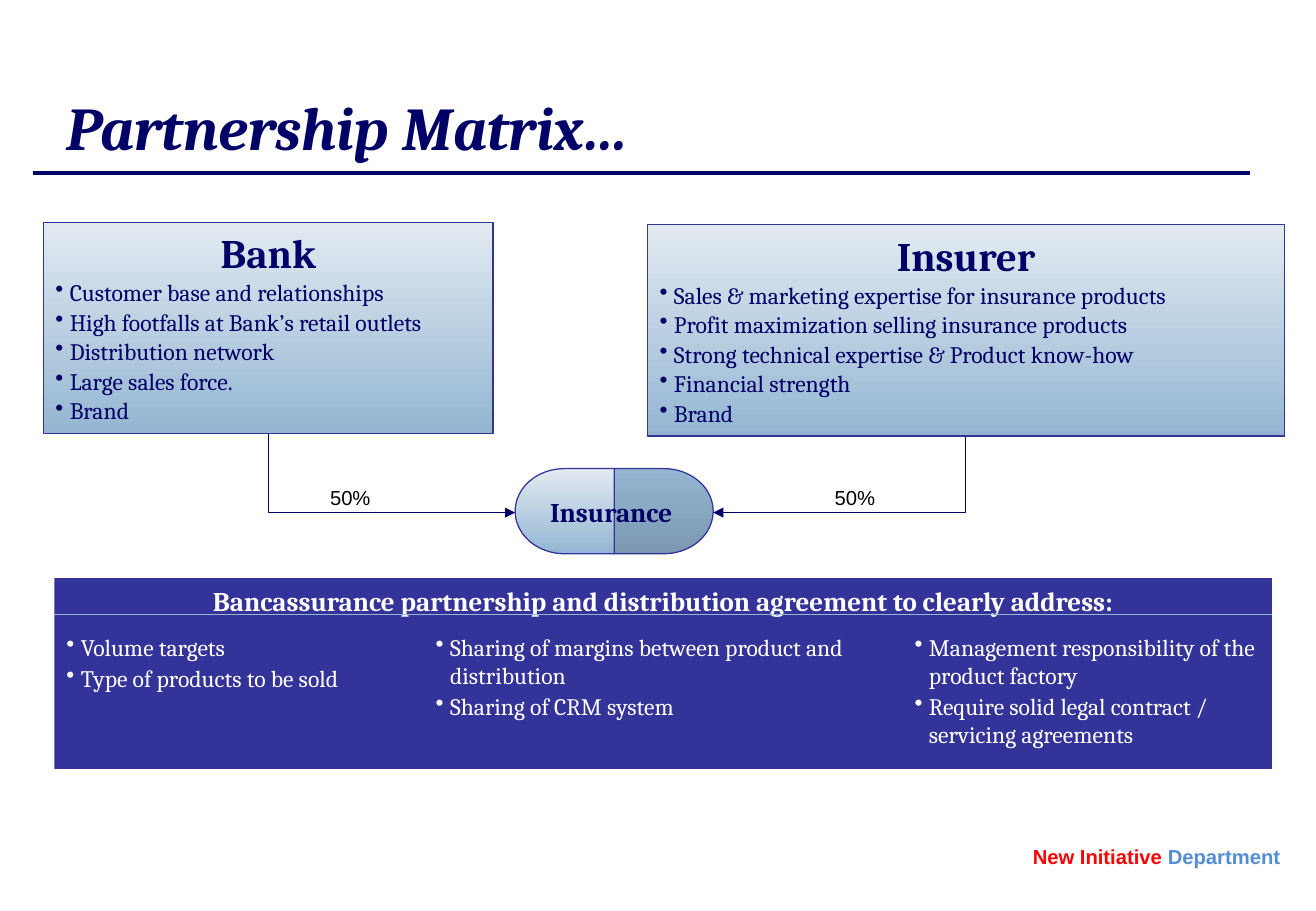
"""Build the slide on the bank and insurer partnership."""
import pptx
import pptx.util
import pptx.dml.color
import pptx.enum.shapes
import pptx.enum.text
import pptx.oxml.ns
from lxml import etree

Cm = pptx.util.Cm
Pt = pptx.util.Pt
SHAPE = pptx.enum.shapes.MSO_SHAPE
LINK = pptx.enum.shapes.MSO_CONNECTOR
ALIGN = pptx.enum.text.PP_ALIGN
ANCHOR = pptx.enum.text.MSO_ANCHOR
qn = pptx.oxml.ns.qn

COLORS = {
    "navy": "000066",
    "edge": "333399",
    "pale": "E2EAF1",
    "blue": "94B6D2",
    "steel": "7C98B0",
    "white": "FFFFFF",
    "black": "000000",
    "red": "FF0000",
    "sky": "548DD4",
}


def tint(name):
    return pptx.dml.color.RGBColor.from_string(COLORS[name])


def write(frame, text, size=14, color="navy", font="Cambria", bold=False,
          slant=False, align=ALIGN.LEFT, bullet=False, gap=0, join=False):
    para = frame.paragraphs[-1]
    if para.runs and not join:
        para = frame.add_paragraph()
    para.alignment = align
    para.space_before = Pt(gap)
    if bullet:
        props = para._p.get_or_add_pPr()
        props.set("marL", str(Cm(0.3)))
        props.set("indent", str(-Cm(0.3)))
        etree.SubElement(props, qn("a:buChar")).set("char", "•")
    run = para.add_run()
    run.text = text
    run.font.size = Pt(size)
    run.font.name = font
    run.font.bold = bold
    run.font.italic = slant
    run.font.color.rgb = tint(color)


def add_list(frame, items, **style):
    for item in items:
        write(frame, item, bullet=True, **style)


def add_text(slide, box, wrap=True, anchor=ANCHOR.TOP):
    frame = slide.shapes.add_textbox(*map(Cm, box)).text_frame
    frame.word_wrap = wrap
    frame.vertical_anchor = anchor
    return frame


def add_block(slide, kind, box, fill, edge=None, flip=False):
    shape = slide.shapes.add_shape(kind, *map(Cm, box))
    shape.shadow.inherit = False
    if len(fill) == 1:
        shape.fill.solid()
        shape.fill.fore_color.rgb = tint(fill[0])
    else:
        shape.fill.gradient()
        shape.fill.gradient_angle = 270
        for stop, name, place in zip(shape.fill.gradient_stops, fill, (0, 1)):
            stop.color.rgb = tint(name)
            stop.position = place
    if edge:
        shape.line.color.rgb = tint(edge)
        shape.line.width = Pt(0.75)
    else:
        shape.line.fill.background()
    if flip:
        shape._element.spPr.find(qn("a:xfrm")).set("flipH", "1")
    shape.text_frame.word_wrap = True
    shape.text_frame.vertical_anchor = ANCHOR.TOP
    return shape.text_frame


def add_line(slide, start, end, color, width=0.75, kind=LINK.STRAIGHT):
    line = slide.shapes.add_connector(kind, *map(Cm, start + end))
    line.line.color.rgb = tint(color)
    line.line.width = Pt(width)
    etree.SubElement(line._element.spPr, qn("a:effectLst"))
    return line


def add_elbow(slide, start, end, color):
    (x1, y1), (x2, y2) = start, end
    mid_x, mid_y = (x1 + x2) / 2, (y1 + y2) / 2
    wide, tall = abs(y2 - y1) / 2, abs(x2 - x1) / 2
    right = x2 > x1
    side = wide if right else -wide
    line = add_line(slide, (mid_x + side, mid_y - tall),
                    (mid_x - side, mid_y + tall), color, kind=LINK.ELBOW)
    props = line._element.spPr
    props.find(qn("a:prstGeom")).set("prst", "bentConnector2")
    props.find(qn("a:xfrm")).set("rot", str((270 if right else 90) * 60000))
    tail = etree.SubElement(props.find(qn("a:ln")), qn("a:tailEnd"))
    tail.set("type", "triangle")


def add_party(slide, box, name, items):
    frame = add_block(slide, SHAPE.RECTANGLE, box, ("pale", "blue"), "edge")
    write(frame, name, size=24, bold=True, align=ALIGN.CENTER)
    add_list(frame, items, gap=0.7)


def add_hub(slide):
    left, top, wide, tall = 10.77, 9.8, 2.07, 1.78
    add_block(slide, SHAPE.FLOWCHART_DELAY, (left + wide, top, wide, tall),
              ("blue", "steel"), "edge")
    add_block(slide, SHAPE.FLOWCHART_DELAY, (left, top, wide, tall),
              ("pale", "blue"), "edge", flip=True)
    frame = add_text(slide, (left, 10.24, 2 * wide, 0.94))
    write(frame, "Insurance ", size=16, bold=True, align=ALIGN.CENTER)
    add_elbow(slide, (5.61, 9.07), (left, 10.72), "navy")
    add_elbow(slide, (20.19, 9.12), (left + 2 * wide, 10.72), "navy")
    for x in (6.65, 17.2):
        write(add_text(slide, (x, 10.03, 1.6, 0.76)), "50%", size=12,
              color="black", font="Arial")


def add_terms(slide):
    left, wide = 1.14, 25.45
    frame = add_block(slide, SHAPE.RECTANGLE, (left, 12.09, wide, 3.99),
                      ("edge",))
    write(frame, "Bancassurance partnership and distribution agreement to "
          "clearly address:", size=16, color="white", bold=True,
          align=ALIGN.CENTER)
    terms = (
        (left, 8.18, ("Volume targets", "Type of products to be sold")),
        (8.86, 9.55, ("Sharing of margins between product and distribution",
                      "Sharing of CRM system")),
        (18.87, 8.18, ("Management responsibility of the product factory",
                       "Require solid legal contract / servicing agreements")),
    )
    for x, span, items in terms:
        add_list(add_text(slide, (x, 13.11, span, 2.72)), items,
                 color="white", gap=1.4)
    add_line(slide, (left, 12.85), (left + wide, 12.85), "blue")


def main():
    deck = pptx.Presentation()
    deck.slide_width, deck.slide_height = Cm(27.51), Cm(19.05)
    slide = deck.slides.add_slide(deck.slide_layouts[6])

    title = add_text(slide, (1.14, 1.7, 24.77, 1.9), anchor=ANCHOR.MIDDLE)
    write(title, "Partnership Matrix…", size=36, bold=True, slant=True)
    add_line(slide, (0.69, 3.61), (26.14, 3.61), "navy", width=2.25)

    add_party(slide, (0.91, 4.65, 9.4, 4.42), "Bank", (
        "Customer base and relationships",
        "High footfalls at Bank’s retail outlets",
        "Distribution network",
        "Large sales force.",
        "Brand",
    ))
    add_party(slide, (13.54, 4.7, 13.31, 4.42), "Insurer", (
        "Sales & marketing expertise for insurance products",
        "Profit maximization selling insurance products",
        "Strong technical expertise & Product know-how",
        "Financial strength",
        "Brand",
    ))
    add_hub(slide)
    add_terms(slide)

    foot = add_text(slide, (21.34, 17.53, 5.74, 0.76), wrap=False,
                    anchor=ANCHOR.MIDDLE)
    label = {"size": 12, "font": "Arial", "bold": True}
    write(foot, "New Initiative ", color="red", **label)
    write(foot, "Department", color="sky", join=True, **label)
    deck.save("out.pptx")


if __name__ == "__main__":
    main()
